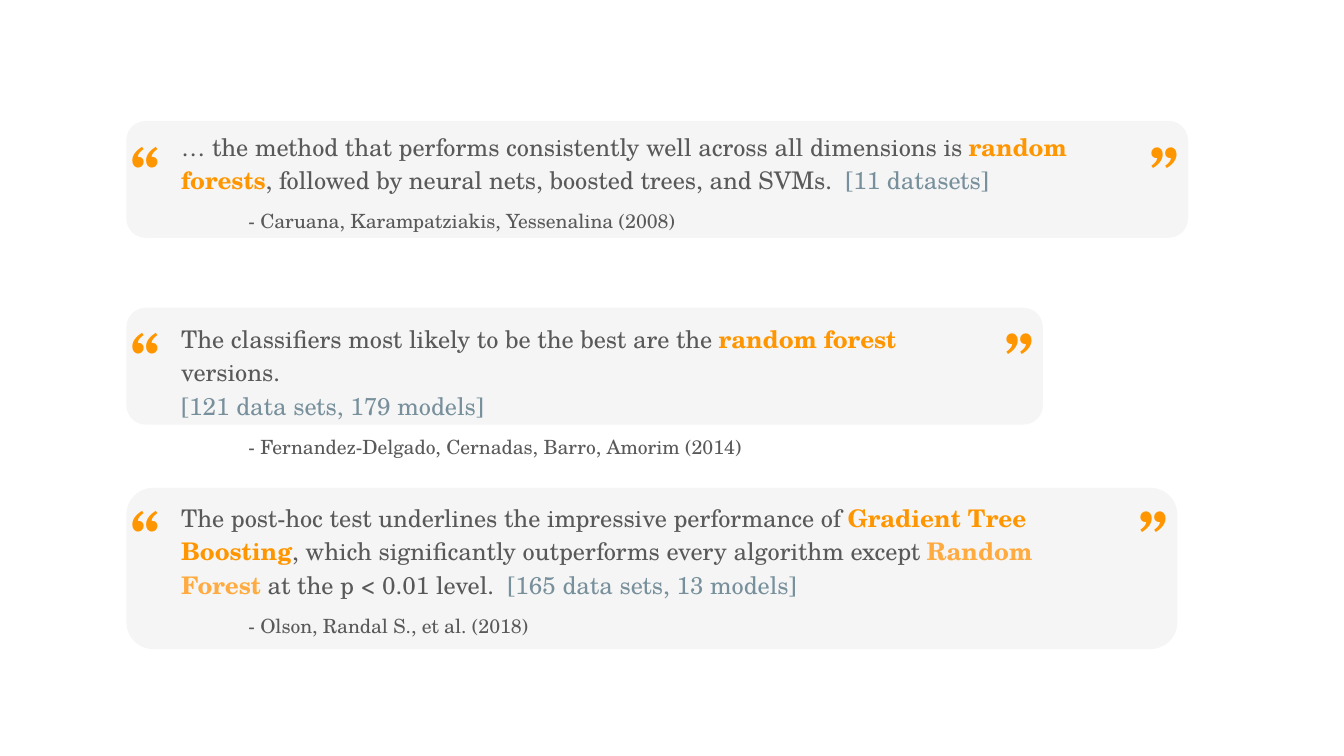
from pptx import Presentation
from pptx.dml.color import RGBColor
from pptx.enum.shapes import MSO_SHAPE as Shape
from pptx.enum.text import MSO_ANCHOR as Anchor
from pptx.util import Inches, Pt

THEME = {
    "font": "TeX Gyre Schola",
    "card": "F5F5F5", "body": "595959", "strong": "FF9600",
    "soft": "FFAB40", "data": "78909C",
    "mark_size": 31, "quote_size": 13, "source_size": 10.5,
}
BOLD_ROLES = ("strong", "soft")

# Each run is (text, role); a run of "\n" is a line break
QUOTES = [
    {
        "card": (0.9, 7.9, 0.87),  # top, width, height
        "text": (0.85, 7.34, 0.97),
        "mark_top": 0.81,
        "runs": [
            ("… the method that performs consistently well across all dimensions is ", "body"),
            ("random forests", "strong"),
            (", followed by neural nets, boosted trees, and SVMs.  ", "body"),
            ("[11 datasets]", "data"),
        ],
        "source": "- Caruana, Karampatziakis, Yessenalina (2008)",
    },
    {
        "card": (2.29, 6.82, 0.87),
        "text": (2.28, 6.23, 0.97),
        "mark_top": 2.19,
        "runs": [
            ("The classifiers most likely to be the best are the ", "body"),
            ("random forest", "strong"),
            (" versions.", "body"),
            ("\n", "body"),
            ("[121 data sets, 179 models]", "data"),
        ],
        "source": "- Fernandez-Delgado, Cernadas, Barro, Amorim (2014)",
    },
    {
        "card": (3.63, 7.82, 1.2),
        "text": (3.61, 7.14, 1.22),
        "mark_top": 3.52,
        "runs": [
            ("The post-hoc test underlines the impressive performance of ", "body"),
            ("Gradient Tree Boosting", "strong"),
            (", which significantly outperforms every algorithm except ", "body"),
            ("Random Forest", "soft"),
            (" at the p < 0.01 level.  ", "body"),
            ("[165 data sets, 13 models]", "data"),
        ],
        "source": "- Olson, Randal S., et al. (2018)",
    },
]

SLIDE_WIDTH = 10
SLIDE_HEIGHT = SLIDE_WIDTH * 9 / 16
CARD_LEFT, TEXT_LEFT = 0.94, 1.25
OPEN_LEFT, CLOSE_INSET = 0.88, 0.38
MARK_WIDTH, MARK_HEIGHT = 0.77, 0.72
SOURCE_INDENT = 0.5


def color(role):
    return RGBColor.from_string(THEME[role])


def add_frame(group, left, top, width, height):
    box = group.shapes.add_textbox(*map(Inches, (left, top, width, height)))
    frame = box.text_frame
    frame.word_wrap = True
    frame.vertical_anchor = Anchor.TOP
    frame.margin_left = frame.margin_right = Inches(0.1)
    frame.margin_top = frame.margin_bottom = Inches(0.1)
    return frame


def space(paragraph, before=0, after=0):
    paragraph.line_spacing = 1.15
    paragraph.space_before, paragraph.space_after = Pt(before), Pt(after)


def add_run(paragraph, text, role, size):
    run = paragraph.add_run()
    run.text = text
    run.font.name = THEME["font"]
    run.font.size = Pt(THEME[size])
    run.font.bold = role in BOLD_ROLES
    run.font.color.rgb = color(role)


def add_mark(group, mark, left, top):
    paragraph = add_frame(group, left, top, MARK_WIDTH, MARK_HEIGHT).paragraphs[0]
    space(paragraph, after=10)
    add_run(paragraph, mark, "strong", "mark_size")


def add_quote(slide, quote):
    group = slide.shapes.add_group_shape()

    # Rounded card
    top, width, height = quote["card"]
    card = group.shapes.add_shape(
        Shape.ROUNDED_RECTANGLE, *map(Inches, (CARD_LEFT, top, width, height)))
    card.adjustments[0] = 0.167
    card.shadow.inherit = False
    card.fill.solid()
    card.fill.fore_color.rgb = color("card")
    card.line.fill.background()

    # Quotation marks at both ends
    add_mark(group, "“", OPEN_LEFT, quote["mark_top"])
    add_mark(group, "”", CARD_LEFT + width - CLOSE_INSET, quote["mark_top"])

    # Quotation
    frame = add_frame(group, TEXT_LEFT, *quote["text"])
    quotation = frame.paragraphs[0]
    space(quotation)
    for text, role in quote["runs"]:
        if text == "\n":
            quotation.add_line_break()
        else:
            add_run(quotation, text, role, "quote_size")

    # Source with a first-line indent
    source = frame.add_paragraph()
    space(source, before=6, after=16)
    properties = source._p.get_or_add_pPr()
    properties.set("marL", "0")
    properties.set("indent", str(Inches(SOURCE_INDENT)))
    add_run(source, quote["source"], "body", "source_size")


def main():
    deck = Presentation()
    deck.slide_width, deck.slide_height = Inches(SLIDE_WIDTH), Inches(SLIDE_HEIGHT)
    slide = deck.slides.add_slide(deck.slide_layouts[6])
    for quote in QUOTES:
        add_quote(slide, quote)
    deck.save("out.pptx")


if __name__ == "__main__":
    main()
